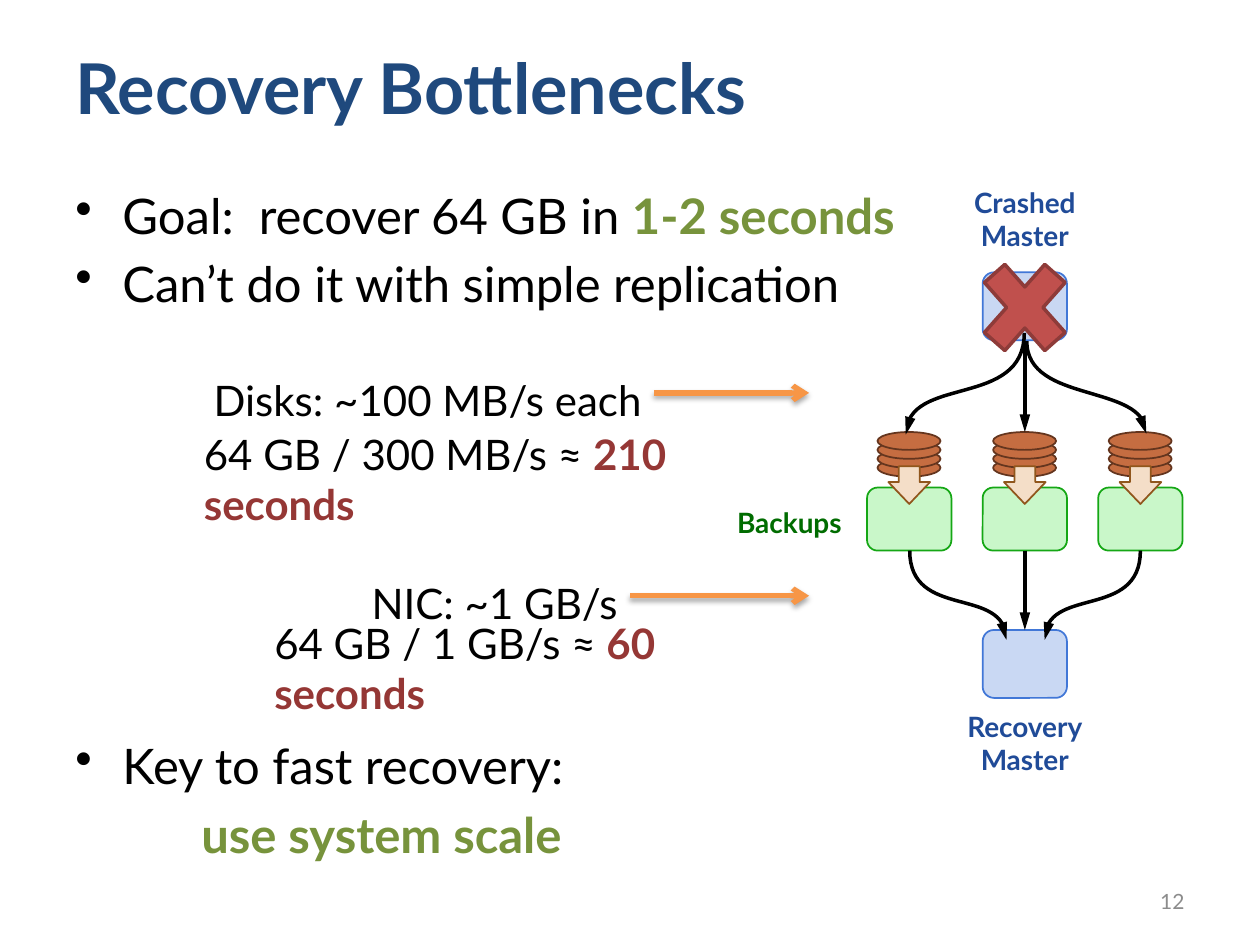
from typing import NamedTuple

import pptx
import pptx.dml.color
import pptx.enum.shapes
import pptx.enum.text
import pptx.oxml.ns
import pptx.util
from lxml import etree

Cm = pptx.util.Cm
Pt = pptx.util.Pt
qn = pptx.oxml.ns.qn
Shape = pptx.enum.shapes.MSO_SHAPE
Align = pptx.enum.text.PP_ALIGN
Anchor = pptx.enum.text.MSO_ANCHOR

FONT = "Lato"
COLORS = {
    "title": "1F497D", "text": "000000", "goal": "77933C", "limit": "953735",
    "number": "8C8C8C", "master_label": "204B98", "backup_label": "006C00",
    "master": "C9D8F3", "master_edge": "4177D7",
    "backup": "C9F7C9", "backup_edge": "15A715",
    "disk": "C56D41", "disk_edge": "64351E",
    "read": "F4DEC8", "read_edge": "90561C",
    "crash": "C0504D", "crash_edge": "8E3B39",
    "flow": "000000", "pointer": "F79646",
}

# Diagram geometry in centimetres
CENTER_X = 20.66
COLUMN_GAP = 2.33
NODE_WIDTH = 1.7
CURVE_STEPS = 32


class Box(NamedTuple):
    left: float
    top: float
    width: float
    height: float

    def lengths(self) -> list:
        return [Cm(value) for value in self]


class Run(NamedTuple):
    text: str
    color: str = "text"
    bold: bool = False


class Line(NamedTuple):
    runs: list[Run]
    before: float = 0
    bullet: bool = False
    margin: float = 0


class Label(NamedTuple):
    box: Box
    lines: list[Line]
    size: float
    align: Align = Align.LEFT
    anchor: Anchor = Anchor.TOP


class Curve(NamedTuple):
    """Cubic curve: start, two control points and end."""
    start: tuple[float, float]
    control_1: tuple[float, float]
    control_2: tuple[float, float]
    end: tuple[float, float]


LABELS = [
    Label(Box(1.27, 3.61, 17.07, 13.41), [
        Line([Run("Goal:  recover 64 GB in "), Run("1-2 seconds", "goal", True)], bullet=True, margin=0.95),
        Line([Run("Can’t do it with simple replication")], 5.6, True, 0.95),
        Line([Run("Key to fast recovery:")], 241.5, True, 0.95),
        Line([Run("use system scale", "goal", True)], 5.6, margin=2.54),
    ], 28),
    Label(Box(18.21, 17.65, 5.92, 1.02), [Line([Run("12", "number")])], 12, Align.RIGHT, Anchor.MIDDLE),
    Label(Box(1.27, 0.76, 22.86, 1.98), [Line([Run("Recovery Bottlenecks", "title", True)])], 40,
          anchor=Anchor.MIDDLE),
    *(Label(Box(CENTER_X - 1.55, top, 3.1, 1.63),
            [Line([Run(word, "master_label", True)]) for word in (state, "Master")], 16, Align.CENTER)
      for state, top in (("Crashed", 3.61), ("Recovery", 14.17))),
    Label(Box(14.61, 10.06, 2.87, 0.94), [Line([Run("Backups", "backup_label", True)])], 16),
    Label(Box(2.11, 7.42, 11.07, 1.27), [Line([Run("Disks: ~100 MB/s each")])], 24, Align.RIGHT),
    Label(Box(3.86, 8.51, 12.12, 2.31),
          [Line([Run("64 GB / 300 MB/s ≈ "), Run("210 seconds", "limit", True)])], 24),
    Label(Box(5.21, 11.51, 7.49, 1.27), [Line([Run("NIC: ~1 GB/s")])], 24, Align.RIGHT),
    Label(Box(5.28, 12.32, 10.8, 2.31),
          [Line([Run("64 GB / 1 GB/s ≈ "), Run("60 seconds", "limit", True)])], 24),
]

CURVES = [
    Curve((18.34, 11.1), (18.34, 12.52), (20.27, 11.79), (20.29, 12.9)),
    Curve((22.99, 11.1), (22.99, 12.52), (21.06, 11.79), (21.06, 12.9)),
    Curve((20.65, 6.71), (20.65, 8.26), (18.29, 7.54), (18.26, 8.76)),
    Curve((20.7, 6.88), (20.7, 8.15), (23.09, 7.72), (23.11, 8.74)),
]


def rgb(name: str) -> pptx.dml.color.RGBColor:
    return pptx.dml.color.RGBColor.from_string(COLORS[name])


def add_label(slide, label: Label) -> None:
    frame = slide.shapes.add_textbox(*label.box.lengths()).text_frame
    frame.word_wrap = True
    frame.vertical_anchor = label.anchor
    for index, line in enumerate(label.lines):
        paragraph = frame.paragraphs[0] if index == 0 else frame.add_paragraph()
        paragraph.alignment = label.align
        paragraph.space_before = Pt(line.before)
        paragraph.font.name = FONT
        paragraph.font.size = Pt(label.size)
        properties = paragraph._p.get_or_add_pPr()
        properties.set("marL", str(Cm(line.margin)))
        if line.bullet:
            properties.set("indent", str(-Cm(line.margin)))
            bullet = etree.Element(qn("a:buChar"), char="•")
            properties.insert_element_before(bullet, "a:tabLst", "a:defRPr", "a:extLst")
        for part in line.runs:
            run = paragraph.add_run()
            run.text = part.text
            run.font.name = FONT
            run.font.size = Pt(label.size)
            run.font.bold = part.bold
            run.font.color.rgb = rgb(part.color)


def add_part(slide, kind: Shape, box: Box, color: str, line_width: float = 1):
    part = slide.shapes.add_shape(kind, *box.lengths())
    part.shadow.inherit = False
    part.fill.solid()
    part.fill.fore_color.rgb = rgb(color)
    part.line.color.rgb = rgb(f"{color}_edge")
    part.line.width = Pt(line_width)
    return part


def style_arrow(arrow, color: str, width: float, head: str, length: str) -> None:
    arrow.line.color.rgb = rgb(color)
    arrow.line.width = Pt(width)
    outline = arrow._element.spPr.find(qn("a:ln"))
    etree.SubElement(outline, qn("a:tailEnd"), type=head, w="med", len=length)


def add_curve(slide, curve: Curve) -> None:
    points = []
    for step in range(CURVE_STEPS + 1):
        t = step / CURVE_STEPS
        weights = ((1 - t) ** 3, 3 * t * (1 - t) ** 2, 3 * t ** 2 * (1 - t), t ** 3)
        points.append(tuple(Cm(sum(w * p[axis] for w, p in zip(weights, curve))) for axis in (0, 1)))
    builder = slide.shapes.build_freeform(*points[0])
    builder.add_line_segments(points[1:], close=False)
    flow = builder.convert_to_shape()
    flow.shadow.inherit = False
    flow.fill.background()
    style_arrow(flow, "flow", 2, "triangle", "lg")


def add_arrow(slide, start: tuple[float, float], end: tuple[float, float]):
    """Add a straight connector without its theme shadow; return it and its effect list."""
    arrow = slide.shapes.add_connector(
        pptx.enum.shapes.MSO_CONNECTOR.STRAIGHT, *(Cm(value) for value in start + end))
    style = arrow.line
    style.width = Pt(1)
    return arrow, etree.SubElement(arrow._element.spPr, qn("a:effectLst"))


def add_flow(slide, top: float, bottom: float) -> None:
    arrow, _ = add_arrow(slide, (CENTER_X, top), (CENTER_X, bottom))
    style_arrow(arrow, "flow", 2, "triangle", "lg")


def add_pointer(slide, left: float, y: float) -> None:
    arrow, effects = add_arrow(slide, (left, y), (16.31, y))
    style_arrow(arrow, "pointer", 3, "arrow", "med")
    shadow = etree.SubElement(effects, qn("a:outerShdw"), blurRad=str(Pt(3.1)), dist=str(Pt(1.8)),
                              dir="5400000", rotWithShape="0")
    tint = etree.SubElement(shadow, qn("a:srgbClr"), val=COLORS["text"])
    etree.SubElement(tint, qn("a:alpha"), val="35000")


def add_backup(slide, center: float) -> None:
    """Add a stack of disks feeding one backup server."""
    for level in range(4):
        add_part(slide, Shape.OVAL, Box(center - 0.64, 9.25 - 0.18 * level, 1.27, 0.36), "disk")
    add_part(slide, Shape.ROUNDED_RECTANGLE, Box(center - NODE_WIDTH / 2, 9.83, NODE_WIDTH, 1.27), "backup")
    read = add_part(slide, Shape.DOWN_ARROW, Box(center - 0.42, 9.4, 0.84, 0.76), "read")
    read.adjustments[1] = 0.58


def main() -> None:
    deck = pptx.Presentation()
    deck.slide_width, deck.slide_height = Cm(25.4), Cm(19.05)
    slide = deck.slides.add_slide(deck.slide_layouts[6])
    for label in LABELS:
        add_label(slide, label)
    for top in (5.49, 12.7):
        add_part(slide, Shape.ROUNDED_RECTANGLE, Box(CENTER_X - NODE_WIDTH / 2, top, NODE_WIDTH, 1.37), "master")
    for column in (-1, 0, 1):
        add_backup(slide, CENTER_X + column * COLUMN_GAP)
    for curve in CURVES:
        add_curve(slide, curve)
    add_flow(slide, 6.88, 8.71)
    add_flow(slide, 11.1, 12.7)
    add_part(slide, Shape.MATH_MULTIPLY, Box(CENTER_X - 1.17, 4.88, 2.34, 2.64), "crash", 2)
    add_pointer(slide, 13.18, 7.92)
    add_pointer(slide, 12.7, 12.01)
    deck.save("out.pptx")


if __name__ == "__main__":
    main()
